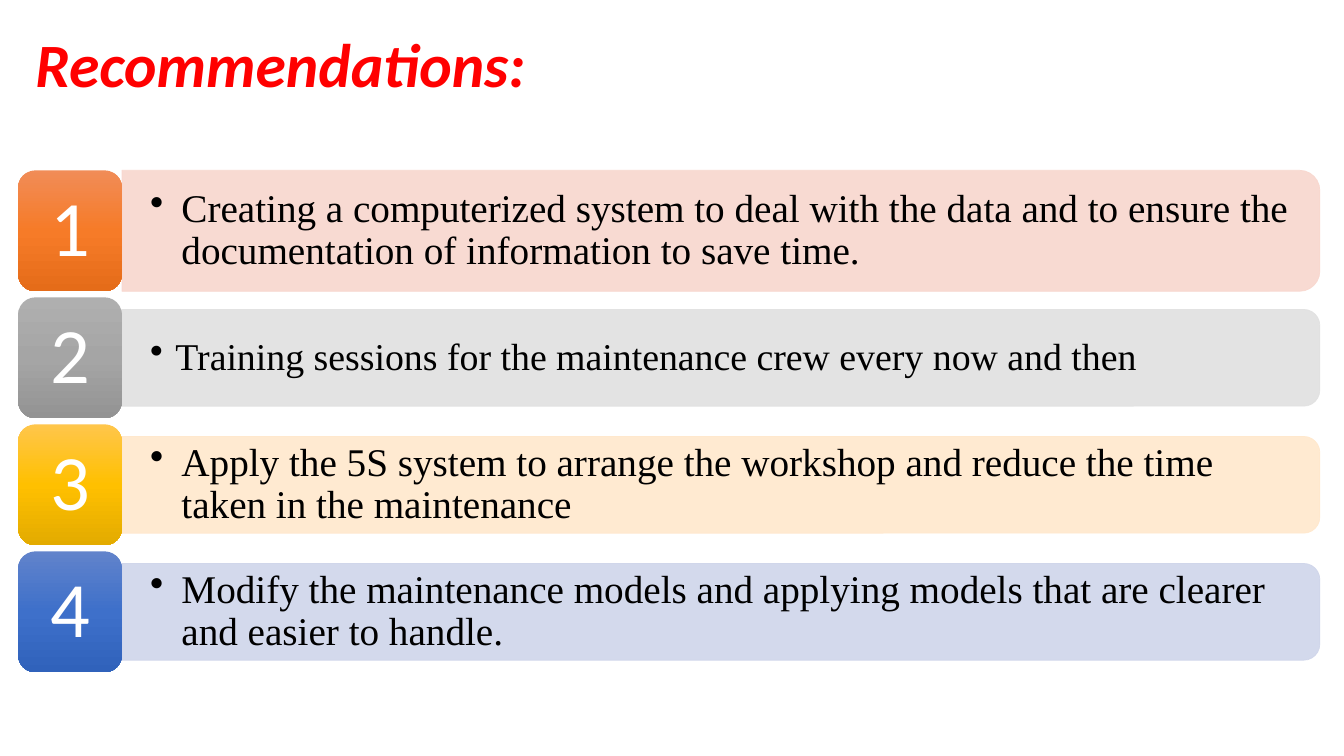
from copy import deepcopy

from lxml.etree import SubElement
from pptx import Presentation
from pptx.dml.color import RGBColor
from pptx.enum.shapes import MSO_SHAPE as Preset
from pptx.enum.text import MSO_ANCHOR as Anchor, MSO_AUTO_SIZE as AutoSize, PP_ALIGN as Align
from pptx.oxml.ns import qn
from pptx.util import Inches, Pt

COLORS = {
    "title": "FF0000",
    "number": "FFFFFF",
    "body": "000000",
    "panels": ["F8D7CE", "E1E1E1", "FFE8CC", "CFD5EA"],
    "tiles": [
        ["F18C57", "F67B28", "E56C19"],
        ["AFAFAF", "A5A5A5", "939393"],
        ["FFC64B", "FFC000", "E3AB00"],
        ["6183CB", "3E70CA", "3062BB"],
    ],
}
RECOMMENDATIONS = [
    ("Creating a computerized system to deal with the data and to ensure "
     "the documentation of information to save time.", 28, 1.2, 0.31),
    ("Training sessions for the maintenance crew every now and then", 27, 0.96, 0.25),
    ("Apply the 5S system to arrange the workshop and reduce the time "
     "taken in the maintenance", 28, 0.96, 0.31),
    ("Modify the maintenance models and applying models that are clearer "
     "and easier to handle.", 28, 0.96, 0.31),
]
FIRST_CENTER = 2.29
ROW_PITCH = 1.26
PANEL_LEFT, PANEL_LENGTH = 1.21, 11.88
TILE_LEFT, TILE_WIDTH, TILE_HEIGHT = 0.18, 1.03, 1.2


def write(frame, text, font, size, color, align=Align.LEFT, inset=(0.1, 0.05)):
    frame.text = text
    frame.word_wrap = True
    frame.auto_size = AutoSize.NONE
    frame.vertical_anchor = Anchor.MIDDLE
    frame.margin_left = frame.margin_right = Inches(inset[0])
    frame.margin_top = frame.margin_bottom = Inches(inset[1])
    paragraph = frame.paragraphs[0]
    paragraph.alignment = align
    paragraph.line_spacing = 0.9
    run = paragraph.runs[0]
    run.font.name = font
    run.font.size = Pt(size)
    run.font.color.rgb = RGBColor.from_string(color)
    return paragraph


def add_title(slide):
    title = slide.shapes.title
    title.left, title.top = Inches(0.25), Inches(0.16)
    title.width, title.height = Inches(12.77), Inches(1.03)
    heading = write(title.text_frame, "Recommendations:", "Calibri", 44, COLORS["title"])
    heading.runs[0].font.bold = True
    heading.runs[0].font.italic = True


def add_panel(slide, center, height, color):
    left = PANEL_LEFT + (PANEL_LENGTH - height) / 2
    panel = slide.shapes.add_shape(
        Preset.ROUND_2_SAME_RECTANGLE, Inches(left), Inches(center - PANEL_LENGTH / 2),
        Inches(height), Inches(PANEL_LENGTH))
    panel.rotation = 90
    panel.shadow.inherit = False
    panel.fill.solid()
    panel.line.width = Pt(0.5)
    for paint in (panel.fill, panel.line.fill):
        paint.solid()
        paint.fore_color.rgb = RGBColor.from_string(color)
    for tint in panel._element.spPr.iter(qn("a:srgbClr")):
        SubElement(tint, qn("a:alpha"), val="90000")


def add_recommendation(slide, center, height, text, size, indent):
    box_height = height - 0.1
    box = slide.shapes.add_textbox(
        Inches(1.22), Inches(center - box_height / 2), Inches(11.83), Inches(box_height))
    paragraph = write(box.text_frame, text, "Times New Roman", size, COLORS["body"],
                      inset=(0.27, 0.14))
    paragraph.level = 1
    properties = paragraph._p.get_or_add_pPr()
    properties.set("marL", str(Inches(indent)))
    properties.set("indent", str(-Inches(indent)))
    SubElement(properties, qn("a:buChar"), char="•")


def add_number_tile(slide, center, number, shades):
    tile = slide.shapes.add_shape(
        Preset.ROUNDED_RECTANGLE, Inches(TILE_LEFT), Inches(center - TILE_HEIGHT / 2),
        Inches(TILE_WIDTH), Inches(TILE_HEIGHT))
    tile.shadow.inherit = False
    tile.line.fill.background()
    tile.fill.gradient()
    tile.fill.gradient_angle = 270
    stop_list = tile._element.spPr.find(".//" + qn("a:gsLst"))
    stop_list.append(deepcopy(stop_list[-1]))
    for stop, shade, position in zip(tile.fill.gradient_stops, shades, (0, 0.5, 1)):
        stop.position = position
        stop.color.rgb = RGBColor.from_string(shade)
    write(tile.text_frame, str(number), "Calibri", 56, COLORS["number"],
          Align.CENTER, (0.23, 0.12))


def main():
    deck = Presentation()
    deck.slide_width, deck.slide_height = Inches(13.33), Inches(7.5)
    slide = deck.slides.add_slide(deck.slide_layouts[5])
    add_title(slide)
    for row, (text, size, height, indent) in enumerate(RECOMMENDATIONS):
        center = FIRST_CENTER + row * ROW_PITCH
        add_panel(slide, center, height, COLORS["panels"][row])
        add_recommendation(slide, center, height, text, size, indent)
        add_number_tile(slide, center, row + 1, COLORS["tiles"][row])
    deck.save("out.pptx")


if __name__ == "__main__":
    main()
